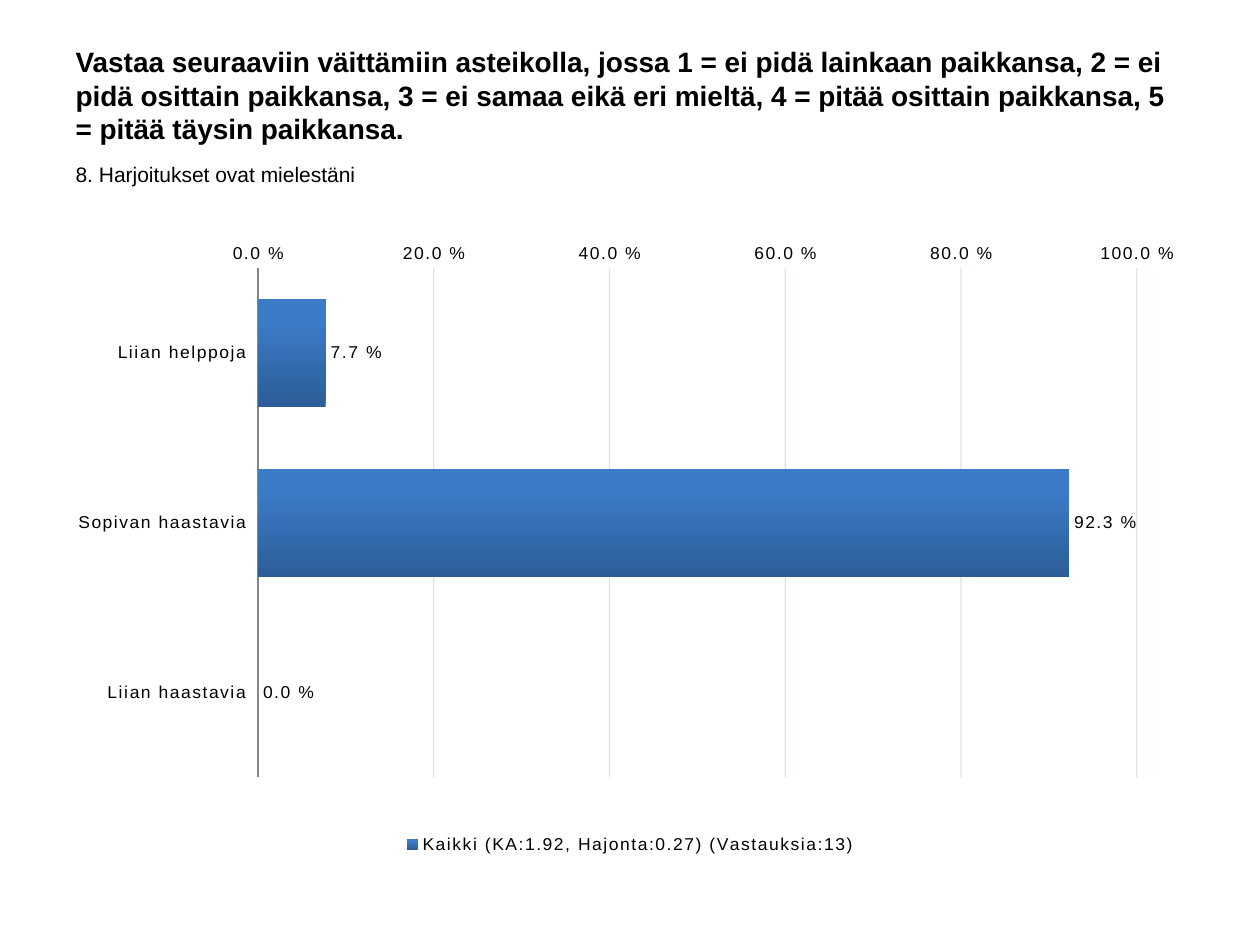
from lxml.etree import SubElement
from pptx import Presentation
from pptx.chart.data import CategoryChartData
from pptx.dml.color import RGBColor
from pptx.enum.chart import XL_AXIS_CROSSES as Crosses
from pptx.enum.chart import XL_CHART_TYPE as ChartType
from pptx.enum.chart import XL_LABEL_POSITION as LabelPosition
from pptx.enum.chart import XL_LEGEND_POSITION as LegendPosition
from pptx.enum.chart import XL_TICK_LABEL_POSITION as TickLabelPosition
from pptx.enum.chart import XL_TICK_MARK as TickMark
from pptx.enum.text import MSO_ANCHOR as Anchor
from pptx.enum.text import PP_ALIGN as Align
from pptx.oxml import parse_xml
from pptx.oxml.ns import nsdecls, qn
from pptx.util import Emu, Pt

PX_PER_INCH = 126
COLORS = {
    "text": "000000",
    "grid": "4F81BD",
    "axis": "868686",
    "bar_dark": "2C5D98",
    "bar_light": "3C7BC7",
}
FONT = "Arial"
PERCENT = "0.0\\ %"
TITLE = (
    "Vastaa seuraaviin väittämiin asteikolla, jossa 1 = ei pidä lainkaan paikkansa, "
    "2 = ei pidä osittain paikkansa, 3 = ei samaa eikä eri mieltä, "
    "4 = pitää osittain paikkansa, 5 = pitää täysin paikkansa."
)
QUESTION = "8. Harjoitukset ovat mielestäni"
SERIES = "Kaikki (KA:1.92, Hajonta:0.27) (Vastauksia:13)"
ANSWERS = {"Liian helppoja": 0.077, "Sopivan haastavia": 0.923, "Liian haastavia": 0}


def px(length):
    """Turn whole pixels into EMU."""
    return Emu(round(length * 914400 / PX_PER_INCH))


def color(name):
    """Look up a named colour."""
    return RGBColor.from_string(COLORS[name])


def style_font(font, size, bold=False):
    """Apply the slide's typeface and text colour."""
    font.name = FONT
    font.size = Pt(size)
    font.bold = bold
    font.color.rgb = color("text")


def fill_placeholder(shape, box, text, size, anchor, bold=False):
    """Move a placeholder into its box and write one plain paragraph."""
    shape.left, shape.top, shape.width, shape.height = map(px, box)
    frame = shape.text_frame
    frame.word_wrap = True
    frame.vertical_anchor = anchor
    paragraph = frame.paragraphs[0]
    paragraph.alignment = Align.LEFT
    properties = paragraph._p.get_or_add_pPr()
    properties.set("marL", "0")
    properties.set("indent", "0")
    SubElement(properties, qn("a:buNone"))
    run = paragraph.add_run()
    run.text = text
    style_font(run.font, size, bold)


def style_axes(chart):
    """Format the reversed answer axis and the percentage axis."""
    answers, percentages = chart.category_axis, chart.value_axis
    for axis in (answers, percentages):
        axis.major_tick_mark = axis.minor_tick_mark = TickMark.NONE
        style_font(axis.tick_labels.font, 10)
    answers.reverse_order = True
    answers.crosses = Crosses.MAXIMUM
    answers.tick_label_position = TickLabelPosition.LOW
    answers.format.line.color.rgb = color("axis")
    percentages.minimum_scale = 0
    percentages.maximum_scale = 1
    percentages.major_unit = 0.2
    percentages.tick_labels.number_format = PERCENT
    percentages.tick_labels.number_format_is_linked = False
    percentages.format.line.fill.background()
    grid = percentages.major_gridlines.format.line
    grid.width = Pt(0.75)
    grid.color.rgb = color("grid")
    for solid in percentages.major_gridlines._xAx.iterfind(
        f"{qn('c:majorGridlines')}//{qn('a:srgbClr')}"
    ):
        SubElement(solid, qn("a:alpha")).set("val", "20000")


def style_bars(plot):
    """Give the bars their gradient and value labels."""
    plot.gap_width = 58
    plot.vary_by_categories = False
    fill = plot.series[0].format.fill
    fill.gradient()
    fill.gradient_angle = 90
    stops = zip(fill.gradient_stops, ("bar_dark", "bar_light"), (0, 0.8))
    for stop, name, position in stops:
        stop.color.rgb = color(name)
        stop.position = position
    labels = plot.series[0].data_labels
    labels.show_value = True
    labels.number_format = PERCENT
    labels.number_format_is_linked = False
    labels.position = LabelPosition.OUTSIDE_END
    style_font(labels.font, 10)


def place_plot(chart, box, plot_box):
    """Fix the inner plot area, given in px from the chart's corner."""
    width, height = box[2:]
    shares = [part / whole for part, whole in zip(plot_box, (width, height) * 2)]
    sizes = "".join(
        f'<c:{tag} val="{share:.3f}"/>' for tag, share in zip("xywh", shares)
    )
    plot_area = chart._chartSpace.chart.plotArea
    for layout in plot_area.findall(qn("c:layout")):
        plot_area.remove(layout)
    plot_area.insert(0, parse_xml(
        f'<c:layout {nsdecls("c")}><c:manualLayout><c:layoutTarget val="inner"/>'
        f'<c:xMode val="edge"/><c:yMode val="edge"/>{sizes}'
        "</c:manualLayout></c:layout>"
    ))


def add_answer_chart(slide, box):
    """Add the bar chart of answer shares."""
    data = CategoryChartData(number_format=PERCENT)
    data.categories = list(ANSWERS)
    data.add_series(SERIES, list(ANSWERS.values()))
    chart = slide.shapes.add_chart(
        ChartType.BAR_CLUSTERED, *map(px, box), data
    ).chart
    chart.has_title = False
    style_font(chart.font, 10)
    style_axes(chart)
    style_bars(chart.plots[0])
    chart.has_legend = True
    chart.legend.position = LegendPosition.BOTTOM
    chart.legend.include_in_layout = False
    style_font(chart.legend.font, 10)
    place_plot(chart, box, (195, 13, 879, 519))
    for properties in chart._chartSpace.iter(qn("a:defRPr")):
        properties.set("spc", "100")


def main():
    """Build and save the survey slide."""
    presentation = Presentation()
    presentation.slide_width, presentation.slide_height = px(1260), px(945)
    slide = presentation.slides.add_slide(presentation.slide_layouts[1])
    title, body = slide.placeholders
    fill_placeholder(title, (63, 45, 1134, 100), TITLE, 16, Anchor.MIDDLE, True)
    fill_placeholder(body, (63, 155, 1134, 74), QUESTION, 12, Anchor.TOP)
    add_answer_chart(slide, (63, 244, 1134, 615))
    presentation.save("out.pptx")


if __name__ == "__main__":
    main()
